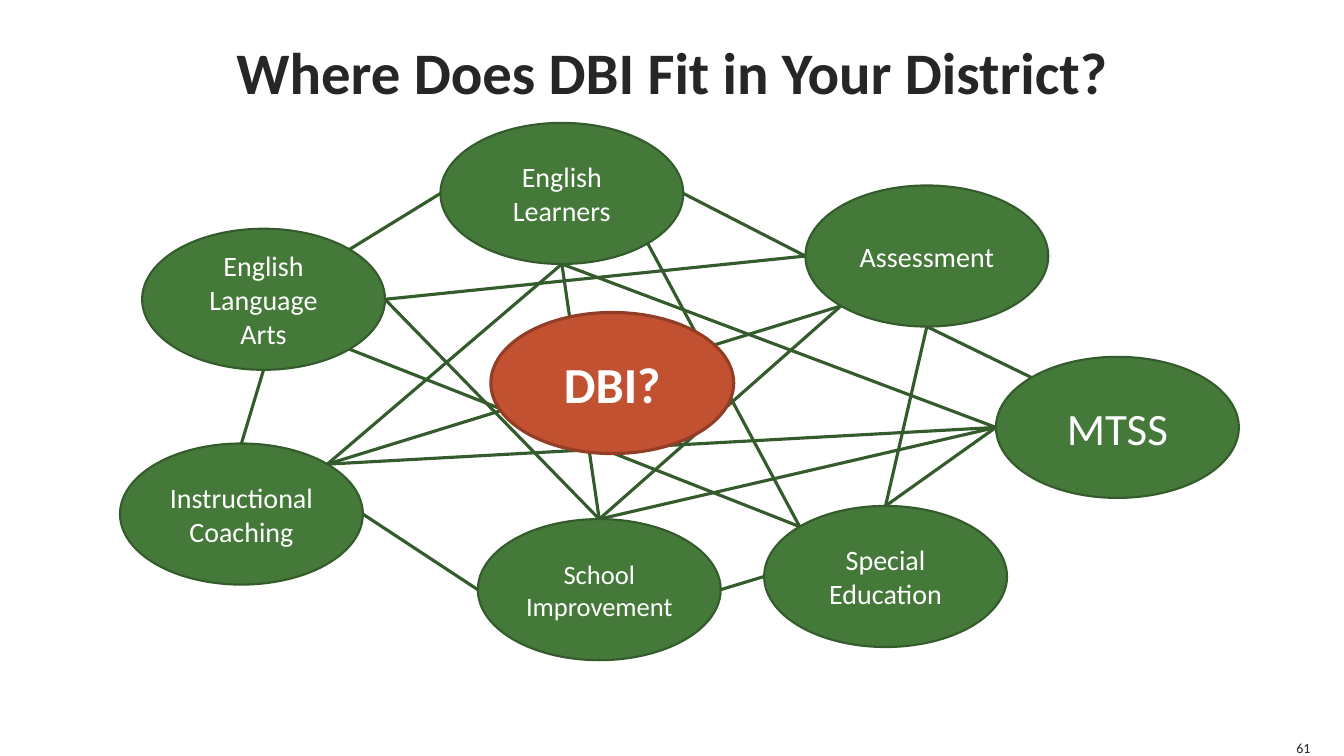
from math import cos, radians, sin

from lxml import etree
from pptx import Presentation
from pptx.dml.color import RGBColor
from pptx.enum.shapes import MSO_CONNECTOR, MSO_SHAPE
from pptx.enum.text import MSO_ANCHOR, PP_ALIGN
from pptx.oxml.ns import qn
from pptx.util import Pt

OVAL = MSO_SHAPE.OVAL
LINE = MSO_CONNECTOR.STRAIGHT
MIDDLE, BOTTOM = MSO_ANCHOR.MIDDLE, MSO_ANCHOR.BOTTOM
CENTER, RIGHT = PP_ALIGN.CENTER, PP_ALIGN.RIGHT

GREEN, EDGE = "447939", "335B2B"
WIDE, HIGH = 173.5, 100.8  # size of every oval

# Angles of the points where links meet an oval
ANGLES = {"e": 0, "se": 45, "s": 90, "sw": 135,
          "w": 180, "nw": 225, "n": 270, "ne": 315}

# Key: left, top, text, text size
OVALS = {
    "mtss": (711.4, 254.9, "MTSS", 32),
    "assess": (575.3, 132.5, "Assessment", 20),
    "coach": (85.7, 316.8, "Instructional Coaching", 20),
    "special": (545.8, 361.4, "Special Education", 20),
    "school": (341.3, 370.8, "School Improvement", 19),
    "arts": (101.5, 163.4, "English Language Arts", 20),
    "learn": (314.6, 87.8, "English Learners", 20),
}

LINKS = [
    ("arts", "ne", "learn", "w"),
    ("arts", "e", "assess", "w"),
    ("assess", "w", "learn", "e"),
    ("assess", "s", "mtss", "nw"),
    ("mtss", "w", "school", "n"),
    ("mtss", "w", "special", "n"),
    ("assess", "sw", "school", "n"),
    ("assess", "sw", "coach", "ne"),
    ("learn", "s", "mtss", "w"),
    ("learn", "s", "coach", "ne"),
    ("arts", "e", "school", "n"),
    ("special", "n", "assess", "s"),
    ("learn", "s", "school", "n"),
    ("arts", "s", "coach", "n"),
    ("mtss", "w", "coach", "ne"),
    ("school", "w", "coach", "e"),
    ("special", "w", "school", "e"),
    ("arts", "se", "special", "nw"),
    ("special", "nw", "learn", "se"),
]


def color(code):
    return RGBColor.from_string(code)


def style(frame, text, size, ink, align, anchor, bold=False):
    frame.text = text
    frame.vertical_anchor = anchor
    para = frame.paragraphs[0]
    para.alignment = align
    font = para.font
    font.name, font.size, font.bold = "Calibri", Pt(size), bold
    font.color.rgb = color(ink)


deck = Presentation()
deck.slide_width, deck.slide_height = Pt(960), Pt(540)
slide = deck.slides.add_slide(deck.slide_layouts[5])
shapes = slide.shapes

# Title
title = shapes.title
title.left, title.top, title.width, title.height = Pt(36), Pt(0), Pt(888), Pt(100.8)
style(title.text_frame, "Where Does DBI Fit in Your District?", 42, "262626",
      CENTER, MIDDLE, True)

# Page number
page = shapes.add_textbox(Pt(912), Pt(527.8), Pt(24), Pt(12.2))
style(page.text_frame, "61", 10, "262626", RIGHT, BOTTOM)

for box in (title, page):
    frame = box.text_frame
    frame.margin_left = frame.margin_right = 0
    frame.margin_top = frame.margin_bottom = 0

# Links between the topics
for start, out, end, into in LINKS:
    ends = []
    for key, side in ((start, out), (end, into)):
        left, top = OVALS[key][:2]
        turn = radians(ANGLES[side])
        ends += [Pt(left + WIDE / 2 * (1 + cos(turn))),
                 Pt(top + HIGH / 2 * (1 + sin(turn)))]
    link = shapes.add_connector(LINE, *ends)
    link.line.color.rgb = color(EDGE)
    link.line.width = Pt(2.25)
    etree.SubElement(link._element.spPr, qn("a:effectLst"))

# Topic ovals, then the central question on top
items = [(*spot, GREEN, EDGE, 1.5, False) for spot in OVALS.values()]
items.append((350.6, 223.2, "DBI?", 36, "C25131", "923D25", 2.25, True))
for left, top, text, size, fill, edge, weight, bold in items:
    oval = shapes.add_shape(OVAL, Pt(left), Pt(top), Pt(WIDE), Pt(HIGH))
    oval.shadow.inherit = False
    oval.fill.solid()
    oval.fill.fore_color.rgb = color(fill)
    oval.line.color.rgb = color(edge)
    oval.line.width = Pt(weight)
    style(oval.text_frame, text, size, "FFFFFF", CENTER, MIDDLE, bold)

deck.save("out.pptx")
